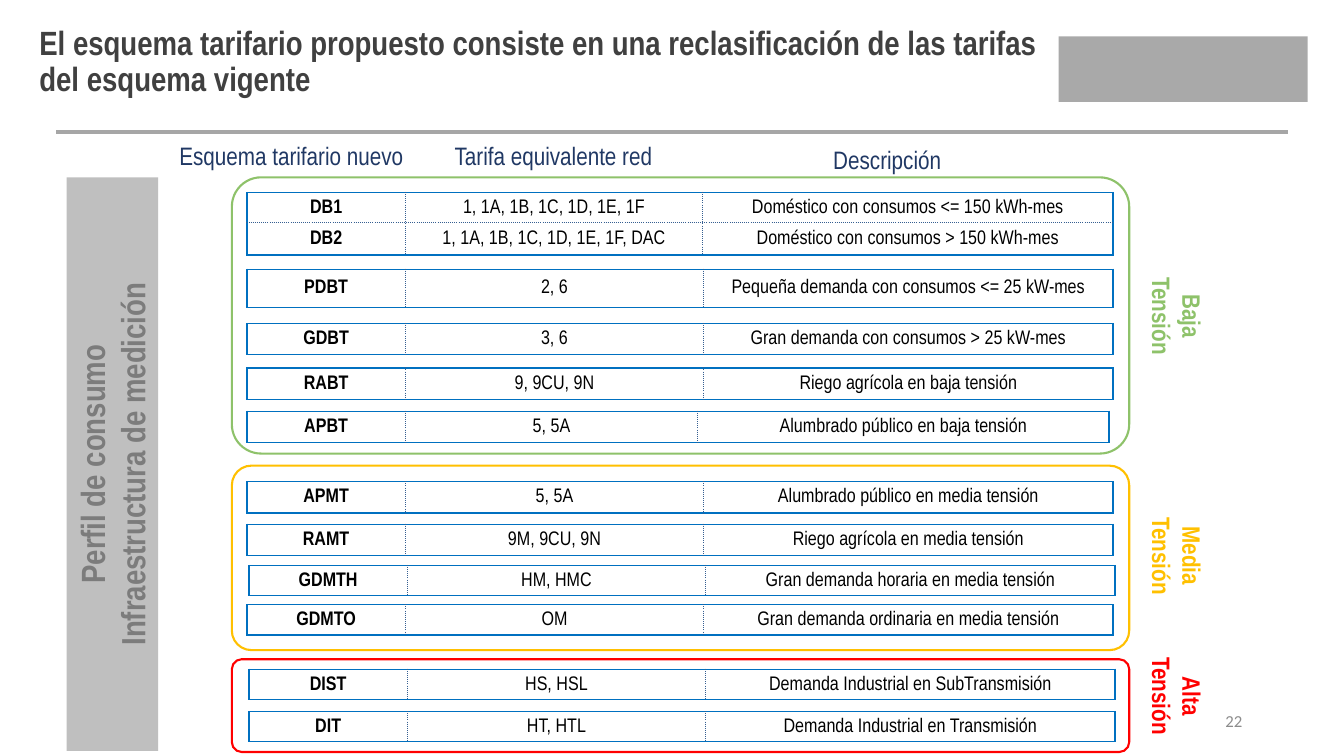
from dataclasses import dataclass

from lxml.etree import SubElement
from pptx import Presentation
from pptx.dml.color import RGBColor
from pptx.enum.shapes import MSO_CONNECTOR as Connector, MSO_SHAPE as Shape
from pptx.enum.text import MSO_ANCHOR as Anchor, MSO_AUTO_SIZE as AutoSize, PP_ALIGN as Align
from pptx.oxml.ns import qn
from pptx.util import Inches, Pt


@dataclass(frozen=True)
class Theme:
    font: str = "Arial Narrow"
    number_font: str = "Calibri"
    title: str = "404040"
    heading: str = "203864"
    body: str = "000000"
    bar: str = "BFBFBF"
    bar_text: str = "7C7C7C"
    emblem: str = "A9A9A9"
    rule: str = "A6A6A6"
    number: str = "8C8C8C"
    edge: str = "0070C0"
    divider: str = "365F91"
    low: str = "8EC26A"
    medium: str = "FFC000"
    high: str = "FF0000"
    large_size: int = 24
    label_size: int = 18
    cell_size: int = 14
    number_size: int = 12


theme = Theme()


def write(para, text, size, color, bold=False, align=Align.CENTER, font=theme.font):
    para.alignment = align
    span = para.add_run()
    span.text = text
    span.font.name = font
    span.font.size = Pt(size)
    span.font.bold = bold
    span.font.color.rgb = RGBColor.from_string(color)


def set_border(cell, side, outer):
    line = SubElement(cell._tc.get_or_add_tcPr(), qn("a:ln" + side), w=str(Pt(1 if outer else 0.5)))
    fill = SubElement(line, qn("a:solidFill"))
    SubElement(fill, qn("a:srgbClr"), val=theme.edge if outer else theme.divider)
    SubElement(line, qn("a:prstDash"), val="solid" if outer else "sysDot")


deck = Presentation()
deck.slide_width, deck.slide_height = Inches(13.33), Inches(7.5)
page = deck.slides.add_slide(deck.slide_layouts[5])

# Title, emblem and rule
title = page.shapes.title
title.left, title.top, title.width, title.height = Inches(0.29), Inches(0.21), Inches(10.16), Inches(1.02)
title.text_frame.word_wrap = True
title.text_frame.auto_size = AutoSize.NONE
title.text_frame.vertical_anchor = Anchor.TOP
title.text_frame.paragraphs[0].line_spacing = 0.9
write(title.text_frame.paragraphs[0],
      "El esquema tarifario propuesto consiste en una reclasificación de las tarifas del esquema vigente",
      theme.large_size, theme.title, True, Align.LEFT)

emblem = page.shapes.add_shape(Shape.RECTANGLE, Inches(10.5), Inches(0.36), Inches(2.47), Inches(0.65))
emblem.shadow.inherit = False
emblem.fill.solid()
emblem.fill.fore_color.rgb = RGBColor.from_string(theme.emblem)
emblem.line.fill.background()

rule = page.shapes.add_connector(Connector.STRAIGHT, Inches(0.56), Inches(1.31), Inches(12.77), Inches(1.31))
rule.line.color.rgb = RGBColor.from_string(theme.rule)
rule.line.width = Pt(2.25)
SubElement(rule._element.spPr, qn("a:effectLst"))

# Voltage frames with their sideways labels: top, height, label, label left, top, width, color
levels = [
    (1.76, 2.74, "Baja Tensión", 10.95, 2.78, 1.44, theme.low),
    (4.62, 1.83, "Media Tensión", 10.95, 5.16, 1.44, theme.medium),
    (6.54, 0.92, "Alta Tensión", 11.05, 6.55, 1.24, theme.high),
]
for top, height, label, label_left, label_top, label_width, color in levels:
    frame = page.shapes.add_shape(Shape.ROUNDED_RECTANGLE, Inches(2.3), Inches(top), Inches(8.9), Inches(height))
    frame.adjustments[0] = 0.106
    frame.shadow.inherit = False
    frame.fill.background()
    frame.line.color.rgb = RGBColor.from_string(color)
    frame.line.width = Pt(1.5)
    box = page.shapes.add_textbox(Inches(label_left), Inches(label_top), Inches(label_width), Inches(0.71))
    box.rotation = 90
    box.text_frame.word_wrap = True
    write(box.text_frame.paragraphs[0], label, theme.label_size, color, True)

# Tariff tables: left, top, row heights, column widths, rows
columns = (1.57, 2.96, 4.06)
tariffs = [
    (2.45, 1.91, (0.3, 0.32), (1.57, 2.95, 4.07), [
        ("DB1", "1, 1A, 1B, 1C, 1D, 1E, 1F", "Doméstico con consumos <= 150 kWh-mes"),
        ("DB2", "1, 1A, 1B, 1C, 1D, 1E, 1F, DAC", "Doméstico con consumos > 150 kWh-mes")]),
    (2.45, 2.67, (0.38,), columns, [("PDBT", "2, 6", "Pequeña demanda con consumos <= 25 kW-mes")]),
    (2.45, 3.21, (0.31,), columns, [("GDBT", "3, 6", "Gran demanda con consumos > 25 kW-mes")]),
    (2.45, 3.65, (0.31,), columns, [("RABT", "9, 9CU, 9N", "Riego agrícola en baja tensión")]),
    (2.45, 4.08, (0.31,), (1.57, 2.9, 4.08), [("APBT", "5, 5A", "Alumbrado público en baja tensión")]),
    (2.45, 4.78, (0.31,), columns, [("APMT", "5, 5A", "Alumbrado público en media tensión")]),
    (2.45, 5.2, (0.31,), columns, [("RAMT", "9M, 9CU, 9N", "Riego agrícola en media tensión")]),
    (2.47, 5.61, (0.3,), columns, [("GDMTH", "HM, HMC", "Gran demanda horaria en media tensión")]),
    (2.45, 6, (0.3,), columns, [("GDMTO", "OM", "Gran demanda ordinaria en media tensión")]),
    (2.47, 6.64, (0.3,), columns, [("DIST", "HS, HSL", "Demanda Industrial en SubTransmisión")]),
    (2.47, 7.06, (0.3,), columns, [("DIT", "HT, HTL", "Demanda Industrial en Transmisión")]),
]
for left, top, heights, widths, rows in tariffs:
    table = page.shapes.add_table(len(rows), len(widths), Inches(left), Inches(top),
                                  Inches(sum(widths)), Inches(sum(heights))).table
    table.first_row = table.horz_banding = False
    for column, width in zip(table.columns, widths):
        column.width = Inches(width)
    for r, (height, texts) in enumerate(zip(heights, rows)):
        table.rows[r].height = Inches(height)
        for c, text in enumerate(texts):
            cell = table.cell(r, c)
            cell.margin_left = cell.margin_right = cell.margin_top = Inches(0.01)
            cell.margin_bottom = 0
            cell.vertical_anchor = Anchor.MIDDLE
            set_border(cell, "L", c == 0)
            set_border(cell, "R", c == len(texts) - 1)
            set_border(cell, "T", r == 0)
            set_border(cell, "B", r == len(rows) - 1)
            cell.fill.background()
            write(cell.text_frame.paragraphs[0], text, theme.cell_size, theme.body, c == 0)

# Column headings
headings = [(1.51, 1.34, "Esquema tarifario nuevo"), (4.11, 1.34, "Tarifa equivalente red"),
            (7.42, 1.38, "Descripción")]
for left, top, text in headings:
    box = page.shapes.add_textbox(Inches(left), Inches(top), Inches(2.76), Inches(0.4))
    box.text_frame.word_wrap = True
    write(box.text_frame.paragraphs[0], text, theme.label_size, theme.heading)

# Sideways bar
bar = page.shapes.add_shape(Shape.RECTANGLE, Inches(-1.73), Inches(4.15), Inches(5.69), Inches(0.91))
bar.rotation = 270
bar.shadow.inherit = False
bar.fill.solid()
bar.fill.fore_color.rgb = RGBColor.from_string(theme.bar)
bar.line.fill.background()
bar.text_frame.word_wrap = True
bar.text_frame.vertical_anchor = Anchor.TOP
write(bar.text_frame.paragraphs[0], "Perfil de consumo", theme.large_size, theme.bar_text, True)
write(bar.text_frame.add_paragraph(), "Infraestructura de medición", theme.large_size, theme.bar_text, True)

# Page number
box = page.shapes.add_textbox(Inches(11.79), Inches(6.95), Inches(0.63), Inches(0.4))
box.text_frame.word_wrap = True
box.text_frame.vertical_anchor = Anchor.MIDDLE
write(box.text_frame.paragraphs[0], "22", theme.number_size, theme.number,
      align=Align.RIGHT, font=theme.number_font)

deck.save("out.pptx")
